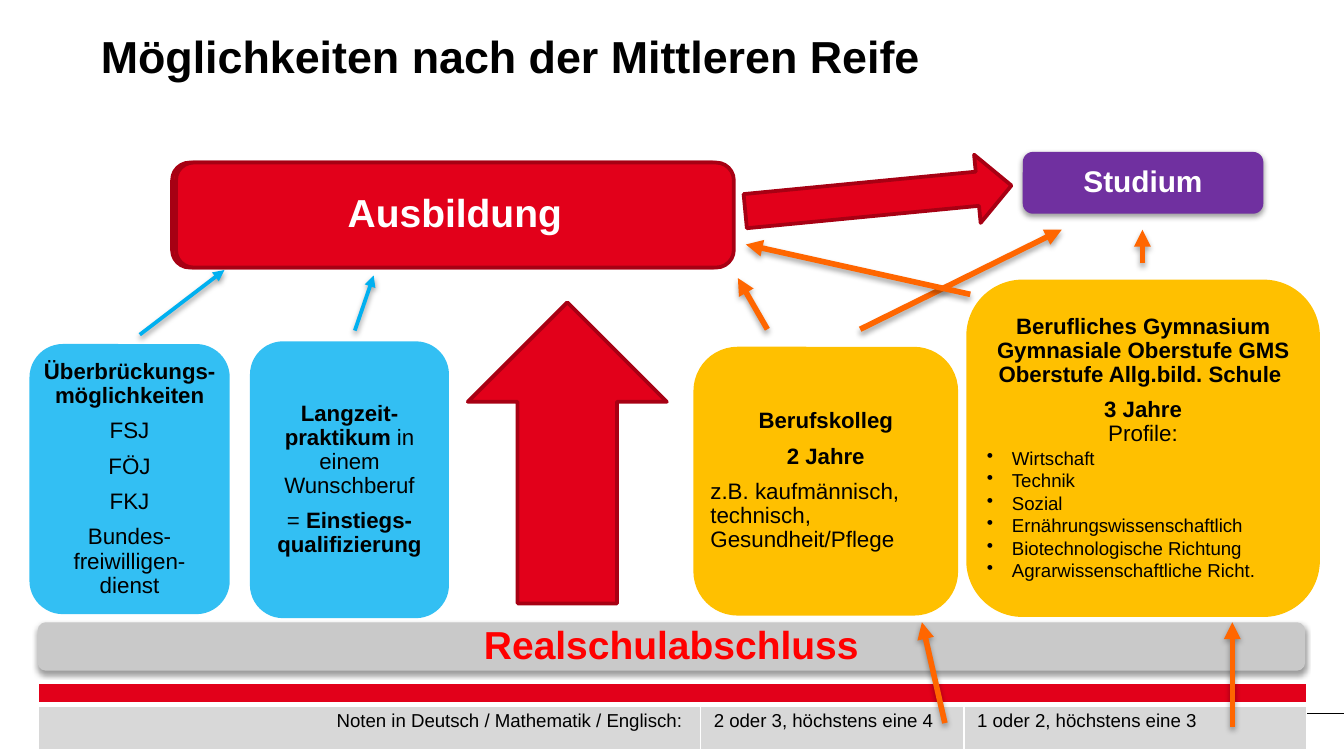
from lxml import etree
from pptx import Presentation
from pptx.dml.color import RGBColor
from pptx.enum import shapes, text
from pptx.oxml import ns
from pptx.util import Pt

COLORS = {
    "black": "000000", "white": "FFFFFF", "red": "E2001A", "dark_red": "A70013",
    "bright_red": "FF0000", "yellow": "FFC000", "purple": "7030A0", "blue": "00B0F0",
    "orange": "FF6600", "gray": "C9C9C9", "light_gray": "D8D8D8",
}
RGB = {name: RGBColor.from_string(code) for name, code in COLORS.items()}
A = ns.nsdecls("a")
ROUND = shapes.MSO_SHAPE.ROUNDED_RECTANGLE
UP = shapes.MSO_SHAPE.UP_ARROW
LEFT, CENTER, RIGHT = text.PP_ALIGN.LEFT, text.PP_ALIGN.CENTER, text.PP_ALIGN.RIGHT


def write(frame, words, size=12, bold=False, color="black", align=CENTER,
          spacing=0.9, before=6, bullet=False, new=True):
    """Add words as a new paragraph, or as a further run of the last one."""
    paragraph = frame.paragraphs[-1]
    if new:
        if paragraph.runs:
            paragraph = frame.add_paragraph()
            paragraph.space_before = Pt(before)
        paragraph.alignment = align
        paragraph.line_spacing = spacing
    if bullet:
        properties = paragraph._p.get_or_add_pPr()
        properties.set("marL", str(Pt(13.5)))
        properties.set("indent", str(Pt(-13.5)))
        properties.append(etree.fromstring(f'<a:buChar {A} char="•"/>'))
    for number, line in enumerate(words.split("\n")):
        if number:
            paragraph.add_line_break()
        if line:
            run = paragraph.add_run()
            run.text = line
            run.font.name, run.font.size, run.font.bold = "Arial", Pt(size), bold
            run.font.color.rgb = RGB[color]


def add_shadow(item, opacity=38, distance=1.6):
    for old in item._element.spPr.findall(ns.qn("a:effectLst")):
        item._element.spPr.remove(old)
    item._element.spPr.append(etree.fromstring(
        f'<a:effectLst {A}><a:outerShdw blurRad="{Pt(3.1)}" dist="{Pt(distance)}" '
        f'dir="5400000" rotWithShape="0"><a:srgbClr val="{COLORS["black"]}">'
        f'<a:alpha val="{opacity * 1000}"/></a:srgbClr></a:outerShdw></a:effectLst>'))


prs = Presentation()
prs.slide_width, prs.slide_height = Pt(720), Pt(405)
slide = prs.slides.add_slide(prs.slide_layouts[5])

title = slide.shapes.title
title.left, title.top, title.width, title.height = Pt(46.8), Pt(11.5), Pt(648), Pt(67.7)
title.text_frame.vertical_anchor = text.MSO_ANCHOR.TOP
title.text_frame.auto_size = text.MSO_AUTO_SIZE.NONE
write(title.text_frame, "Möglichkeiten nach der Mittleren Reife",
      size=24, bold=True, align=LEFT, spacing=1)

footer_rule = slide.shapes.add_connector(
    shapes.MSO_CONNECTOR.STRAIGHT, Pt(32.4), Pt(382.3), Pt(720), Pt(382.3))
footer_rule.line.color.rgb, footer_rule.line.width = RGB["black"], Pt(0.5)
footer_rule._element.spPr.append(etree.fromstring(f"<a:effectLst {A}/>"))

# Stations: preset, left, top, width, height, fill, outline, rotation
stations = {
    "kolleg": (ROUND, 371.5, 185.8, 141.8, 144, "yellow", None, 0),
    "studium": (ROUND, 547.9, 81.4, 128.9, 33.1, "purple", None, 0),
    "abschluss": (ROUND, 20.2, 333.4, 679, 25.9, "gray", None, 0),
    "ueberbrueckung": (ROUND, 15.8, 184.3, 107.3, 144.7, "blue", None, 0),
    "to_ausbildung": (UP, 250.6, 162, 106.6, 161.3, "red", "dark_red", 0),
    "praktikum": (ROUND, 133.9, 182.9, 106.6, 148.3, "blue", None, 0),
    "gymnasium": (ROUND, 517.7, 149.8, 189.4, 180.7, "yellow", None, 0),
    "ausbildung_back": (ROUND, 92.2, 87.1, 298.8, 56.2, "red", "dark_red", 0),
    "ausbildung": (ROUND, 94.3, 87.1, 298.8, 56.2, "red", "dark_red", 0),
    "to_studium": (UP, 452.2, 34.6, 36.7, 143.3, "red", "dark_red", 84.5),
}
frames = {}
for name, (preset, left, top, width, height, fill, outline, turn) in stations.items():
    station = slide.shapes.add_shape(preset, Pt(left), Pt(top), Pt(width), Pt(height))
    station.rotation = turn
    station.shadow.inherit = False
    station.fill.solid()
    station.fill.fore_color.rgb = RGB[fill]
    if outline:
        station.line.color.rgb, station.line.width = RGB[outline], Pt(2)
    else:
        station.line.fill.background()
    if fill == "blue":
        tint = station._element.spPr.find(f"{ns.qn('a:solidFill')}/{ns.qn('a:srgbClr')}")
        tint.append(etree.fromstring(f'<a:alpha {A} val="80000"/>'))
    if name in ("studium", "abschluss"):
        add_shadow(station)
    frame = frames[name] = station.text_frame
    frame.word_wrap = True
    frame.vertical_anchor = text.MSO_ANCHOR.MIDDLE
    inset = Pt(0 if name in ("abschluss", "ausbildung") else 2.16)
    frame.margin_left = frame.margin_right = frame.margin_top = frame.margin_bottom = inset

write(frames["studium"], "Studium", size=16, bold=True, color="white")
write(frames["abschluss"], "Realschulabschluss", size=20.9, bold=True, color="bright_red")
write(frames["ausbildung"], "Ausbildung", size=20.9, bold=True, color="white")

write(frames["kolleg"], "Berufskolleg", size=11.9, bold=True)
write(frames["kolleg"], "2 Jahre", size=11.9, bold=True)
write(frames["kolleg"], "z.B. kaufmännisch, technisch, Gesundheit/Pflege", align=LEFT)

write(frames["ueberbrueckung"], "Überbrückungs-möglichkeiten", size=11.9, bold=True)
for service in ("FSJ", "FÖJ", "FKJ", "Bundes-\nfreiwilligen-\ndienst"):
    write(frames["ueberbrueckung"], service)

write(frames["praktikum"], "Langzeit-praktikum ", size=11.9, bold=True)
write(frames["praktikum"], "in einem Wunschberuf", size=11.9, new=False)
write(frames["praktikum"], "= ", size=11.9)
write(frames["praktikum"], "Einstiegs-qualifizierung", size=11.9, bold=True, new=False)

write(frames["gymnasium"], "Berufliches Gymnasium\nGymnasiale Oberstufe GMS\n"
      "Oberstufe Allg.bild. Schule ", size=11.9, bold=True)
write(frames["gymnasium"], "3 Jahre\n", size=11.9, bold=True)
write(frames["gymnasium"], "Profile:", new=False)
for profile in ("Wirtschaft", "Technik", "Sozial", "Ernährungswissenschaftlich",
                "Biotechnologische Richtung", "Agrarwissenschaftliche Richt."):
    write(frames["gymnasium"], profile, size=10, align=LEFT, spacing=1, before=0, bullet=True)

# Grades needed for each path
grades = slide.shapes.add_table(2, 3, Pt(20.2), Pt(365.8), Pt(679.7), Pt(36)).table
grades.first_row = grades.horz_banding = False
for column, width in zip(grades.columns, (355, 141.1, 183.6)):
    column.width = Pt(width)
for row, height in zip(grades.rows, (11.5, 24.5)):
    row.height = Pt(height)
grades.cell(0, 0).merge(grades.cell(0, 2))
requirements = ("Noten in Deutsch / Mathematik / Englisch: ",
                "2 oder 3, höchstens eine 4", "1 oder 2, höchstens eine 3")
for column, requirement in enumerate(requirements):
    write(grades.cell(1, column).text_frame, requirement, size=10, spacing=1,
          align=LEFT if column else RIGHT)
    band = grades.cell(0, column)
    band.margin_top = band.margin_bottom = 0
    band.text_frame.paragraphs[0]._p.append(etree.fromstring(f'<a:endParaRPr {A} sz="500"/>'))
    for row, fill in enumerate(("red", "light_gray")):
        cell = grades.cell(row, column)
        cell.fill.solid()
        cell.fill.fore_color.rgb = RGB[fill]
        borders = {"L": 1, "R": 1, "T": 1 if row == 0 else 3, "B": 3 if row == 0 else 1}
        for place, (side, weight) in enumerate(borders.items()):
            cell._tc.get_or_add_tcPr().insert(place, etree.fromstring(
                f'<a:ln{side} {A} w="{Pt(weight)}"><a:solidFill>'
                f'<a:srgbClr val="{COLORS["white"]}"/></a:solidFill></a:ln{side}>'))

# Paths between stations: start x, start y, end x, end y
paths = {
    "blue": [(190.1, 177.1, 200.2, 147.6), (74.9, 179.3, 120.2, 144.7)],
    "orange": [(411.1, 176.4, 395.3, 149), (460.8, 176.4, 568.8, 123.1),
               (612, 141.1, 612, 123.1), (519.8, 157.7, 399.6, 131),
               (506.2, 387.4, 493.9, 333.4), (660.2, 389.5, 660.2, 333.4)],
}
for color, routes in paths.items():
    for route in routes:
        arrow = slide.shapes.add_connector(shapes.MSO_CONNECTOR.STRAIGHT, *map(Pt, route))
        arrow.line.color.rgb = RGB[color]
        arrow.line.width = Pt(2 if color == "blue" else 3)
        arrow.line._get_or_add_ln().append(etree.fromstring(f'<a:tailEnd {A} type="triangle"/>'))
        if color == "blue":
            add_shadow(arrow)
        else:
            add_shadow(arrow, opacity=35, distance=1.8)

prs.save("out.pptx")
